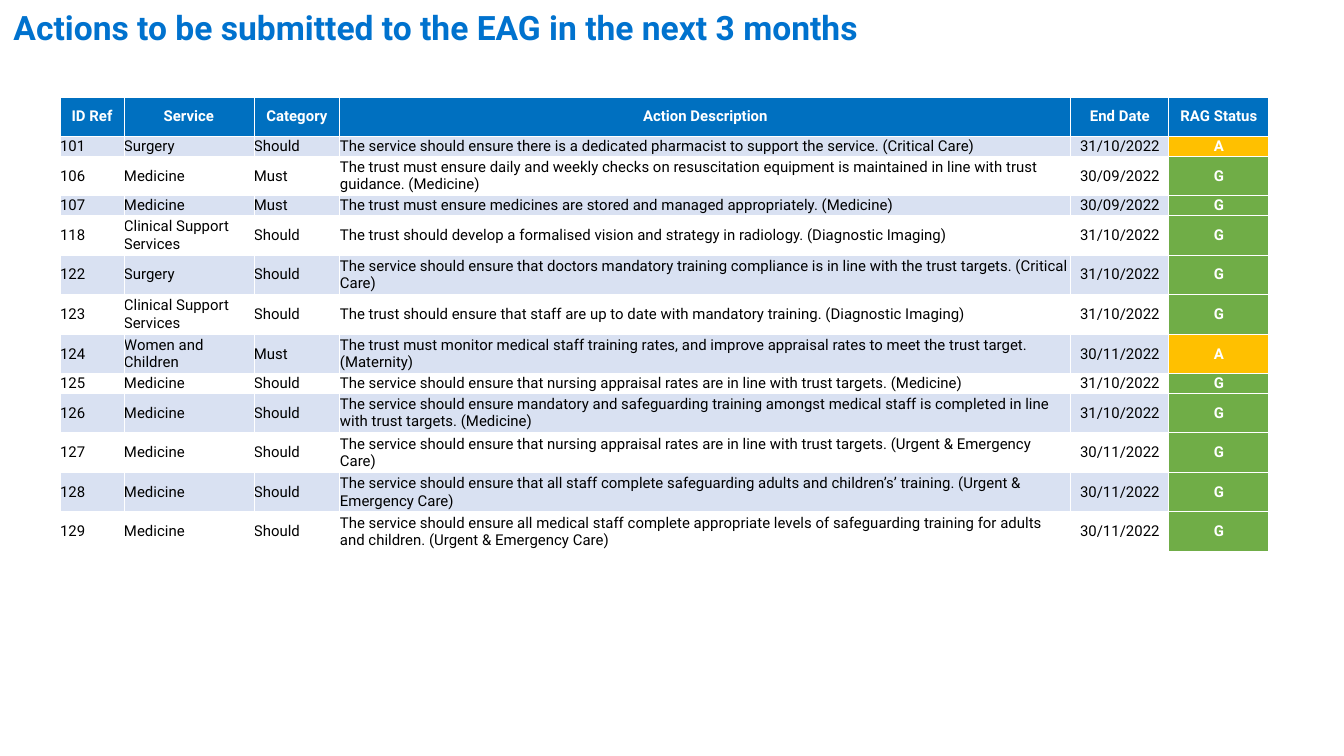
from pptx import Presentation
from pptx.dml.color import RGBColor
from pptx.enum.text import MSO_ANCHOR, MSO_AUTO_SIZE, PP_ALIGN
from pptx.oxml import parse_xml
from pptx.oxml.ns import nsdecls
from pptx.util import Pt

LEFT, CENTER = PP_ALIGN.LEFT, PP_ALIGN.CENTER
TOP, MIDDLE = MSO_ANCHOR.TOP, MSO_ANCHOR.MIDDLE

# Content
TITLE = "Actions to be submitted to the EAG in the next 3 months"
HEADERS = ("ID Ref", "Service", "Category", "Action Description", "End Date", "RAG Status")
ACTIONS = [  # lines of text in the row, then its cells
    (1, "101", "Surgery", "Should", "The service should ensure there is a dedicated pharmacist to support the service. (Critical Care)", "31/10/2022", "A"),
    (2, "106", "Medicine", "Must", "The trust must ensure daily and weekly checks on resuscitation equipment is maintained in line with trust guidance. (Medicine)", "30/09/2022", "G"),
    (1, "107", "Medicine", "Must", "The trust must ensure medicines are stored and managed appropriately. (Medicine)", "30/09/2022", "G"),
    (2, "118", "Clinical Support Services", "Should", "The trust should develop a formalised vision and strategy in radiology. (Diagnostic Imaging)", "31/10/2022", "G"),
    (2, "122", "Surgery", "Should", "The service should ensure that doctors mandatory training compliance is in line with the trust targets. (Critical Care)", "31/10/2022", "G"),
    (2, "123", "Clinical Support Services", "Should", "The trust should ensure that staff are up to date with mandatory training. (Diagnostic Imaging)", "31/10/2022", "G"),
    (2, "124", "Women and Children", "Must", "The trust must monitor medical staff training rates, and improve appraisal rates to meet the trust target. (Maternity)", "30/11/2022", "A"),
    (1, "125", "Medicine", "Should", "The service should ensure that nursing appraisal rates are in line with trust targets. (Medicine)", "31/10/2022", "G"),
    (2, "126", "Medicine", "Should", "The service should ensure mandatory and safeguarding training amongst medical staff is completed in line with trust targets. (Medicine)", "31/10/2022", "G"),
    (2, "127", "Medicine", "Should", "The service should ensure that nursing appraisal rates are in line with trust targets. (Urgent & Emergency Care)", "30/11/2022", "G"),
    (2, "128", "Medicine", "Should", "The service should ensure that all staff complete safeguarding adults and children’s’ training. (Urgent & Emergency Care)", "30/11/2022", "G"),
    (2, "129", "Medicine", "Should", "The service should ensure all medical staff complete appropriate levels of safeguarding training for adults and children. (Urgent & Emergency Care)", "30/11/2022", "G"),
]

# Style and layout
FONT = "Roboto"
COLORS = {"title": "0072CE", "header": "0070C0", "band": "D9E1F2", "white": "FFFFFF",
          "text": "000000", "A": "FFC000", "G": "70AD47"}
SLIDE_W, SLIDE_H = 1344, 756
TITLE_BOX = (0, 0, 1310, 67)
TABLE_X, TABLE_Y, TABLE_H = 60, 97, 455
COL_WIDTHS = (64, 130, 86, 731, 98, 100)
HEADER_LINES = 2


def px(n):
    return round(n * 914400 / 134.4)


def set_font(p, size, color, bold):
    p.font.name = FONT
    p.font.size = Pt(size)
    p.font.bold = bold
    p.font.color.rgb = RGBColor.from_string(COLORS[color])


def add_borders(cell):
    tc_pr = cell._tc.get_or_add_tcPr()
    for side in "LRTB":
        tc_pr.append(parse_xml(
            f'<a:ln{side} {nsdecls("a")} w="6350"><a:solidFill>'
            f'<a:srgbClr val="{COLORS["white"]}"/></a:solidFill></a:ln{side}>'))


def fill_cell(cell, text, fill, color, bold, align):
    add_borders(cell)
    cell.fill.solid()
    cell.fill.fore_color.rgb = RGBColor.from_string(COLORS[fill])
    cell.margin_left = cell.margin_right = cell.margin_top = cell.margin_bottom = 0
    cell.vertical_anchor = MIDDLE
    p = cell.text_frame.paragraphs[0]
    p.text = text
    p.alignment = align
    set_font(p, 8, color, bold)


prs = Presentation()
prs.slide_width, prs.slide_height = px(SLIDE_W), px(SLIDE_H)
s = prs.slides.add_slide(prs.slide_layouts[5])

# Title
title = s.shapes.title
title.left, title.top, title.width, title.height = map(px, TITLE_BOX)
tf = title.text_frame
tf.text = TITLE
tf.word_wrap = True
tf.auto_size = MSO_AUTO_SIZE.NONE
tf.vertical_anchor = TOP
tf.paragraphs[0].alignment = LEFT
set_font(tf.paragraphs[0], 18, "title", True)

# Table grid: row heights share the table height by lines of text
row_lines = [HEADER_LINES] + [action[0] for action in ACTIONS]
table = s.shapes.add_table(len(row_lines), len(HEADERS), px(TABLE_X), px(TABLE_Y),
                           px(sum(COL_WIDTHS)), px(TABLE_H)).table
table.horz_banding = False
for col, width in zip(table.columns, COL_WIDTHS):
    col.width = px(width)
for row, lines in zip(table.rows, row_lines):
    row.height = px(TABLE_H * lines / sum(row_lines))

# Header row
for c, text in enumerate(HEADERS):
    fill_cell(table.cell(0, c), text, "header", "white", True, CENTER)

# Action rows: banded, with the status coloured
for r, (_, *values, status) in enumerate(ACTIONS, start=1):
    band = "band" if r % 2 else "white"
    for c, text in enumerate(values):
        align = CENTER if HEADERS[c] == "End Date" else LEFT
        fill_cell(table.cell(r, c), text, band, "text", False, align)
    fill_cell(table.cell(r, len(values)), status, status, "white", True, CENTER)

prs.save("out.pptx")
